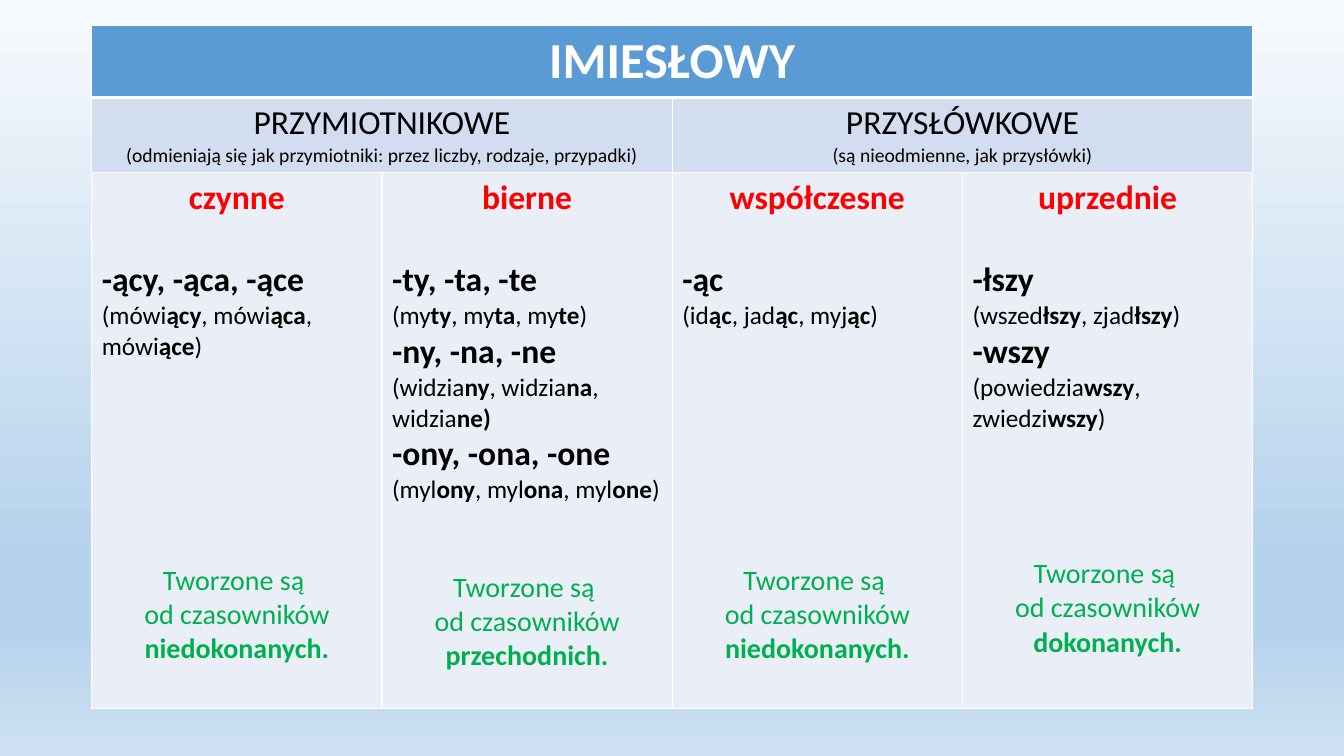
from lxml.etree import SubElement
from pptx import Presentation
from pptx.dml.color import RGBColor
from pptx.enum.text import PP_ALIGN
from pptx.oxml.ns import qn
from pptx.util import Pt

FONT = "Calibri"
BLACK, WHITE, RED, GREEN = "000000", "FFFFFF", "FF0000", "00B050"
HEADER_FILL, GROUP_FILL, KIND_FILL = "5B9BD5", "D2DEEF", "EAEFF7"
BACKGROUND_STOPS = [(0, "F7FAFD"), (74, "B5D2EC"), (83, "B5D2EC"), (100, "CEE1F2")]

GROUPS = [
    ("PRZYMIOTNIKOWE", "(odmieniają się jak przymiotniki: przez liczby, rodzaje, przypadki)"),
    ("PRZYSŁÓWKOWE", "(są nieodmienne, jak przysłówki)"),
]

# Name, endings with examples (*bold*), verb type, gap above the closing note
KINDS = [
    ("czynne",
     [("-ący, -ąca, -ące", "(mówi*ący*, mówi*ąca*, mówi*ące*)")],
     "niedokonanych.", 144),
    ("bierne",
     [("-ty, -ta, -te", "(my*ty*, my*ta*, my*te*)"),
      ("-ny, -na, -ne", "(widzia*ny*, widzia*na*, widzia*ne)*"),
      ("-ony, -ona, -one", "(myl*ony*, myl*ona*, myl*one*)")],
     "przechodnich.", 46.4),
    ("współczesne",
     [("-ąc", "(id*ąc*, jad*ąc*, myj*ąc*)")],
     "niedokonanych.", 166),
    ("uprzednie",
     [("-łszy", "(wszed*łszy*, zjad*łszy*)"),
      ("-wszy", "(powiedzia*wszy*, zwiedzi*wszy*)")],
     "dokonanych.", 88),
]


def color(hex_value):
    return RGBColor.from_string(hex_value)


def paint_background(page):
    fill = page.background.fill
    fill.gradient()
    fill.gradient_angle = 270
    stops = next(page.element.iter(qn("a:gsLst")))
    for stop in list(stops):
        stops.remove(stop)
    for position, hex_value in BACKGROUND_STOPS:
        stop = SubElement(stops, qn("a:gs"), pos=str(position * 1000))
        SubElement(stop, qn("a:srgbClr"), val=hex_value)


def style_cell(cell, fill, bottom_width=1):
    properties = cell._tc.get_or_add_tcPr()
    for side, width in (("L", 1), ("R", 1), ("T", 1), ("B", bottom_width)):
        line = SubElement(properties, qn(f"a:ln{side}"), w=str(Pt(width)))
        solid = SubElement(line, qn("a:solidFill"))
        SubElement(solid, qn("a:srgbClr"), val=WHITE)
    cell.fill.solid()
    cell.fill.fore_color.rgb = color(fill)


def write(cell, text, size, hex_value=BLACK, bold=False, centred=True, gap=0):
    """Add a paragraph; parts between asterisks are bold."""
    frame = cell.text_frame
    para = frame.add_paragraph() if frame.text else frame.paragraphs[0]
    para.alignment = PP_ALIGN.CENTER if centred else PP_ALIGN.LEFT
    para.space_before = Pt(gap)
    para.font.name = FONT
    para.font.size = Pt(size)
    para.font.color.rgb = color(hex_value)
    para.font.bold = bold
    parts = text.split("*")
    for index, part in enumerate(parts):
        if part:
            span = para.add_run()
            span.text = part
            if len(parts) > 1:
                span.font.bold = index % 2 == 1


def fill_kind(cell, name, endings, verbs, note_gap):
    write(cell, name, 24, RED, bold=True)
    for index, (ending, examples) in enumerate(endings):
        write(cell, ending, 24, bold=True, centred=False, gap=0 if index else 29.3)
        write(cell, examples, 18, centred=False)
    write(cell, "Tworzone są ", 20, GREEN, gap=note_gap)
    write(cell, f"od czasowników *{verbs}*", 20, GREEN)


def add_participle_table(page, left, top, width, row_heights):
    count = len(KINDS)
    table = page.shapes.add_table(len(row_heights), count, Pt(left), Pt(top),
                                  Pt(width), Pt(sum(row_heights))).table
    for column in table.columns:
        column.width = Pt(width / count)
    for row, height in zip(table.rows, row_heights):
        row.height = Pt(height)

    # Cell fills and borders
    for index in range(count):
        style_cell(table.cell(0, index), HEADER_FILL, bottom_width=3)
        style_cell(table.cell(1, index), GROUP_FILL)
        style_cell(table.cell(2, index), KIND_FILL)

    # Header
    header = table.cell(0, 0)
    header.merge(table.cell(0, count - 1))
    write(header, "IMIESŁOWY", 36, WHITE, bold=True)

    # Two groups, each over its share of the columns
    share = count // len(GROUPS)
    for index, (name, remark) in enumerate(GROUPS):
        cell = table.cell(1, index * share)
        cell.merge(table.cell(1, (index + 1) * share - 1))
        write(cell, name, 24)
        write(cell, remark, 14)

    # Kinds of participle
    for index, kind in enumerate(KINDS):
        fill_kind(table.cell(2, index), *kind)


def main():
    deck = Presentation()
    deck.slide_width, deck.slide_height = Pt(960), Pt(540)
    page = deck.slides.add_slide(deck.slide_layouts[6])
    paint_background(page)
    add_participle_table(page, 65.5, 18.3, 829.4, [51.1, 53.6, 383])
    deck.save("out.pptx")


if __name__ == "__main__":
    main()
